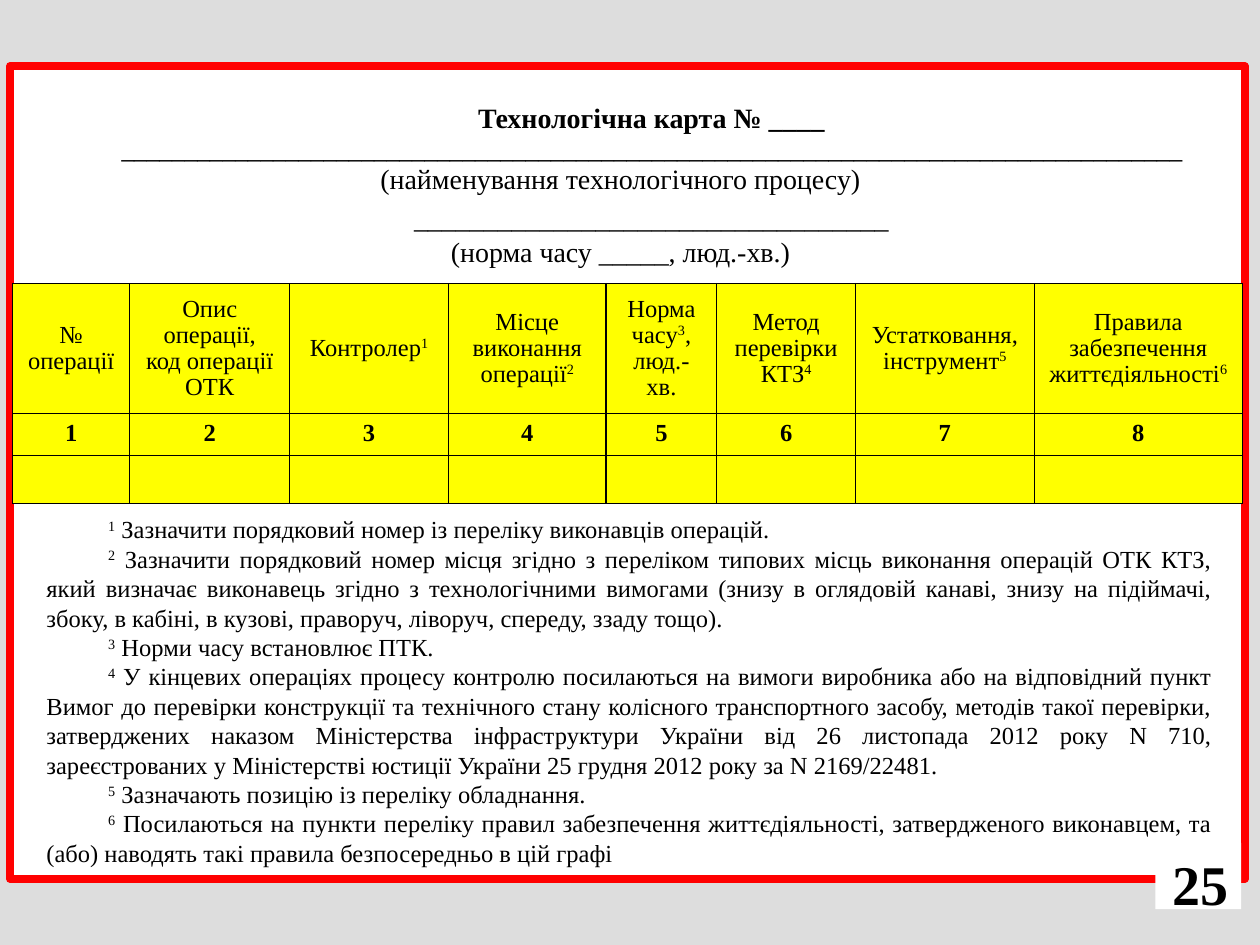
from dataclasses import dataclass

from lxml.etree import SubElement
from pptx import Presentation
from pptx.dml.color import RGBColor as RGB
from pptx.enum.shapes import MSO_SHAPE as Shape
from pptx.enum.text import MSO_ANCHOR as Anchor, PP_ALIGN as Align
from pptx.oxml.ns import qn
from pptx.util import Inches, Pt


@dataclass(frozen=True)
class Theme:
    """Colours, fonts and type sizes of the slide."""
    backdrop: RGB = RGB(0xDD, 0xDD, 0xDD)
    paper: RGB = RGB(255, 255, 255)
    frame: RGB = RGB(255, 0, 0)
    grid: RGB = RGB(255, 255, 0)
    ink: RGB = RGB(0, 0, 0)
    serif: str = "Times New Roman"
    sans: str = "Arial"
    rule: int = 13
    body: int = 14
    heading: int = 16
    number: int = 32


@dataclass(frozen=True)
class Box:
    """A rectangle in inches."""
    left: float
    top: float
    width: float
    height: float

    def share(self, left, top, width, height):
        """Return the box covering the given shares of this one."""
        return Box(self.left + left * self.width, self.top + top * self.height,
                   width * self.width, height * self.height)

    def emu(self):
        """Return left, top, width and height as lengths."""
        return [Inches(v) for v in (self.left, self.top, self.width, self.height)]


THEME = Theme()
SLIDE = Box(0, 0, 10, 7.5)
INDENT = 0.49

HEADING = [
    ("Технологічна карта № ____", dict(bold=True, indent=INDENT)),
    ("_" * 84, dict(size=THEME.rule, font=THEME.sans, indent=INDENT)),
    ("(найменування технологічного процесу)", {}),
    ("_" * 34, dict(indent=INDENT, before=3)),
    ("(норма часу _____, люд.-хв.)", {}),
]
COLUMNS = [
    (0.93, ["№ операції"]),
    (1.27, ["Опис операції,", "код операції ОТК"]),
    (1.26, ["Контролер^1"]),
    (1.25, ["Місце виконання операції^2"]),
    (0.88, ["Норма часу^3,\nлюд.-хв."]),
    (1.10, ["Метод перевірки КТЗ^4"]),
    (1.42, ["Устатковання, інструмент^5"]),
    (1.65, ["Правила забезпечення життєдіяльності^6"]),
]
ROWS = [1.03, 0.33, 0.33]
NOTES = [
    "Зазначити порядковий номер із переліку виконавців операцій.",
    "Зазначити порядковий номер місця згідно з переліком типових місць виконання "
    "операцій ОТК КТЗ, який визначає виконавець згідно з технологічними вимогами "
    "(знизу в оглядовій канаві, знизу на підіймачі, збоку, в кабіні, в кузові, "
    "праворуч, ліворуч, спереду, ззаду тощо).",
    "Норми часу встановлює ПТК.",
    "У кінцевих операціях процесу контролю посилаються на вимоги виробника або на "
    "відповідний пункт Вимог до перевірки конструкції та технічного стану колісного "
    "транспортного засобу, методів такої перевірки, затверджених наказом Міністерства "
    "інфраструктури України від 26 листопада 2012 року N 710, зареєстрованих у "
    "Міністерстві юстиції України 25 грудня 2012 року за N 2169/22481.",
    "Зазначають позицію із переліку обладнання.",
    "Посилаються на пункти переліку правил забезпечення життєдіяльності, "
    "затвердженого виконавцем, та (або) наводять такі правила безпосередньо в цій графі",
]


def write(frame, text, first=False, size=THEME.body, font=THEME.serif, bold=False,
          align=Align.CENTER, indent=0, before=0, spacing=None):
    """Write one paragraph, raising the character after each caret."""
    paragraph = frame.paragraphs[0] if first else frame.add_paragraph()
    paragraph.alignment = align
    paragraph.space_before = Pt(before)
    paragraph.line_spacing = spacing
    paragraph._p.get_or_add_pPr().set("indent", str(Inches(indent)))
    head, *marked = text.split("^")
    pieces = [(head, False)]
    for piece in marked:
        pieces += [(piece[0], True), (piece[1:], False)]
    for piece, raised in pieces:
        for number, line in enumerate(piece.split("\n")):
            if number:
                paragraph.add_line_break()
            if not line and text:
                continue
            run = paragraph.add_run()
            run.text = line
            run.font.size, run.font.name, run.font.bold = Pt(size), font, bold
            run.font.color.rgb = THEME.ink
            if raised:
                run.font._element.set("baseline", "30000")


def add_panel(slide, box, line=None):
    """Add a paper rectangle, outlined when a line colour is given."""
    panel = slide.shapes.add_shape(Shape.RECTANGLE, *box.emu())
    panel.shadow.inherit = False
    panel.fill.solid()
    panel.fill.fore_color.rgb = THEME.paper
    if line is None:
        panel.line.fill.background()
    else:
        panel.line.color.rgb = line
        panel.line.width = Pt(4.5)
    return panel


def add_heading(slide, box):
    """Fill the title placeholder with the card heading."""
    title = slide.shapes.title
    title.left, title.top, title.width, title.height = box.emu()
    frame = title.text_frame
    frame.vertical_anchor = Anchor.TOP
    frame.word_wrap = False
    for number, (text, style) in enumerate(HEADING):
        write(frame, text, first=number == 0, **{"size": THEME.heading, **style})


def style_cell(cell):
    """Give a cell thin ink borders and the grid fill."""
    properties = cell._tc.get_or_add_tcPr()
    for side in ("a:lnL", "a:lnR", "a:lnT", "a:lnB"):
        border = SubElement(properties, qn(side), w=str(Pt(0.75)))
        fill = SubElement(border, qn("a:solidFill"))
        SubElement(fill, qn("a:srgbClr"), val=str(THEME.ink))
    cell.fill.solid()
    cell.fill.fore_color.rgb = THEME.grid


def add_operations(slide, box):
    """Add the operations table with its header, numbers and blank row."""
    table = slide.shapes.add_table(len(ROWS), len(COLUMNS), *box.emu()).table
    total_width = sum(width for width, _ in COLUMNS)
    for row, height in zip(table.rows, ROWS):
        row.height = Inches(box.height * height / sum(ROWS))
    for column, (width, header) in enumerate(COLUMNS):
        table.columns[column].width = Inches(box.width * width / total_width)
        for row, lines in enumerate((header, [str(column + 1)], [""])):
            cell = table.cell(row, column)
            style_cell(cell)
            if row == 0:
                cell.vertical_anchor = Anchor.MIDDLE
            for number, line in enumerate(lines):
                write(cell.text_frame, line, first=number == 0, bold=row == 1,
                      spacing=0.96 if row == 0 else None)


def add_notes(slide, box):
    """Add the numbered footnotes."""
    frame = slide.shapes.add_textbox(*box.emu()).text_frame
    frame.word_wrap = True
    frame.vertical_anchor = Anchor.MIDDLE
    for number, note in enumerate(NOTES, 1):
        write(frame, f"^{number} {note}", first=number == 1, align=Align.JUSTIFY,
              indent=INDENT, spacing=Pt(16.8))


def add_page_number(slide, box):
    """Add the page number on its paper patch."""
    frame = add_panel(slide, box).text_frame
    frame.vertical_anchor = Anchor.TOP
    write(frame, "25", first=True, size=THEME.number, bold=True, align=Align.RIGHT)


def main():
    """Build and save the slide."""
    deck = Presentation()
    deck.slide_width, deck.slide_height = SLIDE.emu()[2:]
    slide = deck.slides.add_slide(deck.slide_layouts[5])
    slide.background.fill.solid()
    slide.background.fill.fore_color.rgb = THEME.backdrop
    sheet = add_panel(slide, SLIDE.share(0.008, 0.07, 0.98, 0.86), THEME.frame)
    slide.shapes.title.element.addprevious(sheet.element)
    add_heading(slide, SLIDE.share(0.035, 0.1, 0.915, 0.22))
    add_operations(slide, SLIDE.share(0.01, 0.3, 0.976, 0.226))
    add_notes(slide, SLIDE.share(0.027, 0.536, 0.945, 0.39))
    add_page_number(slide, SLIDE.share(0.917, 0.892, 0.068, 0.07))
    deck.save("out.pptx")


if __name__ == "__main__":
    main()
